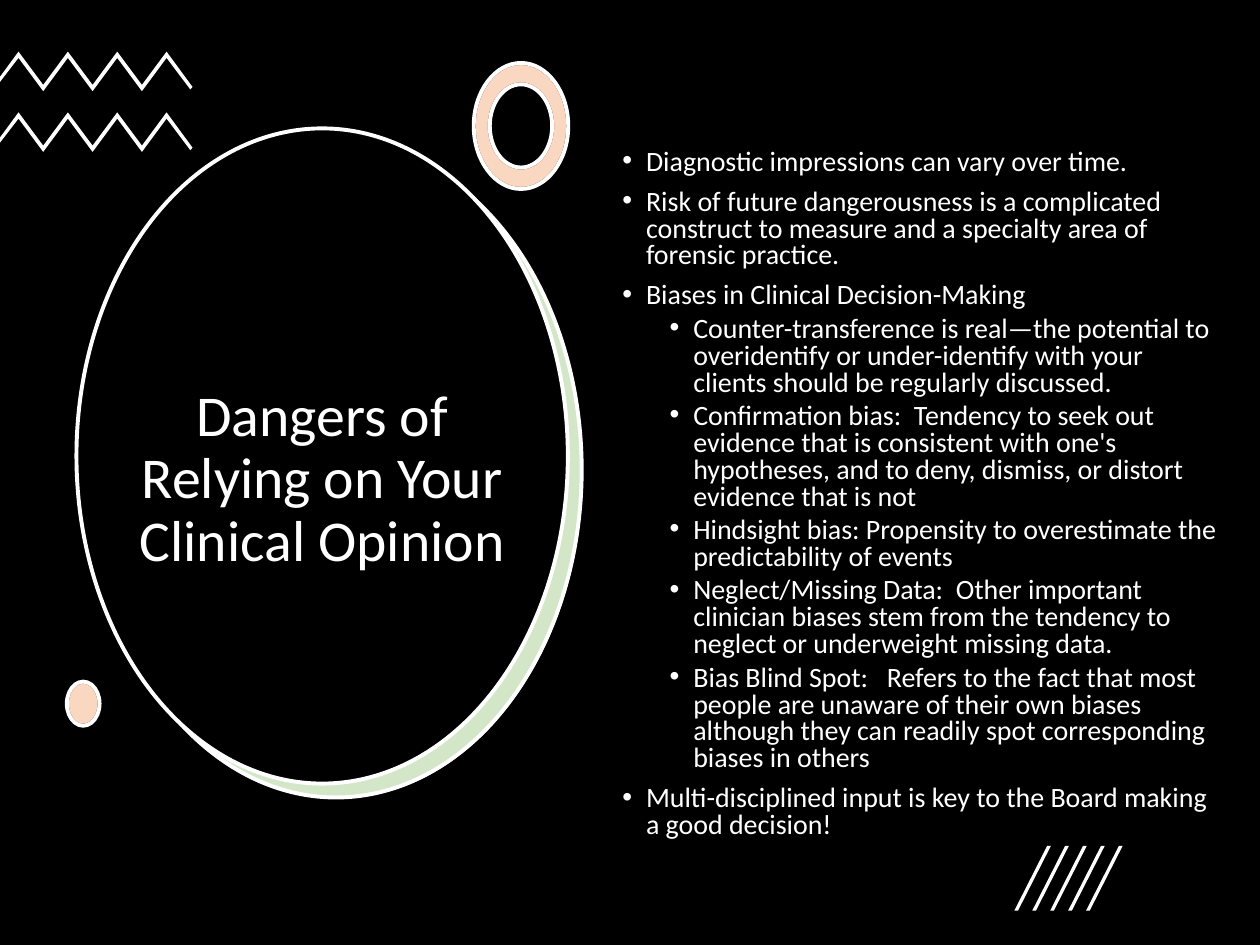
from lxml.etree import SubElement as Sub
from pptx import Presentation
from pptx.dml.color import RGBColor as RGB
from pptx.enum.shapes import MSO_SHAPE as Kind
from pptx.enum.text import MSO_ANCHOR as Anchor, MSO_AUTO_SIZE as Fit, PP_ALIGN as Align
from pptx.oxml.ns import qn
from pptx.util import Pt

INK = {"black": "000000", "white": "FFFFFF", "green": "70AD47", "orange": "ED7D31"}
FACE = "Calibri"
TITLE = "Dangers of Relying on Your Clinical Opinion"
POINTS = [
    (0, "Diagnostic impressions can vary over time."),
    (0, "Risk of future dangerousness is a complicated construct to measure "
        "and a specialty area of forensic practice."),
    (0, "Biases in Clinical Decision-Making"),
    (1, "Counter-transference is real—the potential to overidentify or "
        "under-identify with your clients should be regularly discussed."),
    (1, "Confirmation bias:  Tendency to seek out evidence that is consistent with "
        "one's hypotheses, and to deny, dismiss, or distort evidence that is not"),
    (1, "Hindsight bias: Propensity to overestimate the predictability of events"),
    (1, "Neglect/Missing Data:  Other important clinician biases stem from the "
        "tendency to neglect or underweight missing data."),
    (1, "Bias Blind Spot:   Refers to the fact that most people are unaware of their "
        "own biases although they can readily spot corresponding biases in others"),
    (0, "Multi-disciplined input is key to the Board making a good decision!"),
]


def paint(shape, fill, line=None, alpha=None):
    """Fill and outline a shape; alpha is the opacity in percent."""
    shape.shadow.inherit = False
    shape.fill.solid()
    shape.fill.fore_color.rgb = RGB.from_string(INK[fill])
    if alpha:
        tint = shape._element.spPr.find(qn("a:solidFill"))[0]
        Sub(tint, qn("a:alpha"), val=str(alpha * 1000))
    if line:
        shape.line.color.rgb = RGB.from_string(INK[line])
        shape.line.width = Pt(2.25)
    else:
        shape.line.fill.background()


def preset(shapes, kind, box, *look):
    paint(shapes.add_shape(kind, *map(Pt, box)), *look)


def outline(shapes, loops, *look):
    """Draw one freeform from closed loops of points, to a hundredth of a point."""
    first, *rest = [[(x * 100, y * 100) for x, y in loop] for loop in loops]
    pen = shapes.build_freeform(*first[0], scale=Pt(1) / 100)
    pen.add_line_segments(first[1:])
    for loop in rest:
        pen.move_to(*loop[0])
        pen.add_line_segments(loop[1:])
    shape = pen.convert_to_shape()
    paint(shape, *look)
    return shape


def oval(x, y, rx, ry):
    """Start, control and end points of four Bezier quarters."""
    k = 0.55
    unit = [(0, -1), (-k, -1), (-1, -k), (-1, 0), (-1, k), (-k, 1), (0, 1),
            (k, 1), (1, k), (1, 0), (1, -k), (k, -1), (0, -1)]
    return [(x + rx * u, y + ry * v) for u, v in unit]


def curve(shape):
    """Turn each three line steps of a freeform into one Bezier step."""
    for path in shape._element.iter(qn("a:path")):
        steps = path.findall(qn("a:lnTo"))
        for i in range(0, len(steps) - 2, 3):
            bend = path.makeelement(qn("a:cubicBezTo"))
            steps[i].addprevious(bend)
            for step in steps[i:i + 3]:
                bend.append(step[0])
                path.remove(step)


def disc(shapes, left, top, width, height):
    """Large black oval with a green crescent behind it."""
    for shift, look in ((8.64, ("white",)),
                        (7.92, ("green", "white", 30)),
                        (0, ("black", "white"))):
        preset(shapes, Kind.OVAL, (left + shift, top + shift, width, height), *look)


def waves(shapes, left, top, gap):
    """Two zigzag bands running in from the slide edge."""
    group = shapes.add_group_shape().shapes
    for y in (top, top + gap):
        upper = [(left + 10.6 + 14.1 * i, y + i % 2 * 19) for i in range(7)]
        lower = [(x, v + 3.6) for x, v in reversed(upper)]
        ends = [(left + 110, y + 20.2), (left + 108.7, y + 21.6)]
        edge = [(left, y + 17.3), (left, y + 14.4)]
        outline(group, [upper + ends + lower + edge], "white")


def ring(shapes, left, top, width, height):
    rx, ry = width / 2, height / 2
    loops = [oval(left + rx, top + ry, rx * part, ry * part) for part in (1, 0.66)]
    for look in (("white", "black"), ("orange", "white", 30)):
        curve(outline(shapes, loops, *look))


def dot(shapes, *box):
    for look in (("white", "black"), ("orange", "white", 30)):
        preset(shapes, Kind.OVAL, box, *look)


def slashes(shapes, left, top, height):
    group = shapes.add_group_shape().shapes
    base = top + height
    for i in range(5):
        x = left + 10.25 * i
        outline(group, [[(x + 2.1, base), (x, base), (x + 18.8, top), (x + 20.9, top)]],
                "white")


def place(holder, box, anchor):
    """Bring a placeholder to the front and fit it to its box."""
    holder.left, holder.top, holder.width, holder.height = map(Pt, box)
    tree = holder._element.getparent()
    tree.append(holder._element)
    frame = holder.text_frame
    frame.word_wrap, frame.auto_size = True, Fit.NONE
    frame.vertical_anchor = anchor
    return frame


def style(para, size, spacing):
    para.line_spacing = spacing
    para.font.name, para.font.size = FACE, Pt(size)
    para.font.color.rgb = RGB.from_string(INK["white"])


def heading(holder, *box):
    para = place(holder, box, Anchor.MIDDLE).paragraphs[0]
    para.text, para.alignment = TITLE, Align.CENTER
    style(para, 33, 0.9)


def bullets(holder, *box):
    frame = place(holder, box, Anchor.TOP)
    for i, (level, text) in enumerate(POINTS):
        para = frame.add_paragraph() if i else frame.paragraphs[0]
        para.text, para.level, para.alignment = text, level, Align.LEFT
        para.space_before = Pt((3.75 if level else 7.5) if i else 0)
        props = para._p.get_or_add_pPr()
        props.set("marL", str(Pt(13.5 + 27 * level)))
        props.set("indent", str(-Pt(13.5)))
        Sub(props, qn("a:buFont"), typeface="Arial")
        Sub(props, qn("a:buChar"), char="•")
        style(para, 16, 0.8)


def main():
    deck = Presentation()
    deck.slide_width, deck.slide_height = Pt(720), Pt(540)
    slide = deck.slides.add_slide(deck.slide_layouts[1])
    shapes = slide.shapes
    title, body = slide.placeholders
    preset(shapes, Kind.RECTANGLE, (0, 0, 720, 540), "black")
    disc(shapes, 43.7, 73.4, 280.8, 374.4)
    heading(title, 65, 147.6, 238.3, 253.4)
    waves(shapes, 0, 29.5, 34.7)
    ring(shapes, 270.7, 36, 54, 72)
    dot(shapes, 38.2, 389.5, 18.7, 25.2)
    bullets(body, 348.5, 81.9, 356.4, 432)
    slashes(shapes, 579.6, 483.4, 37)
    deck.save("out.pptx")


if __name__ == "__main__":
    main()
